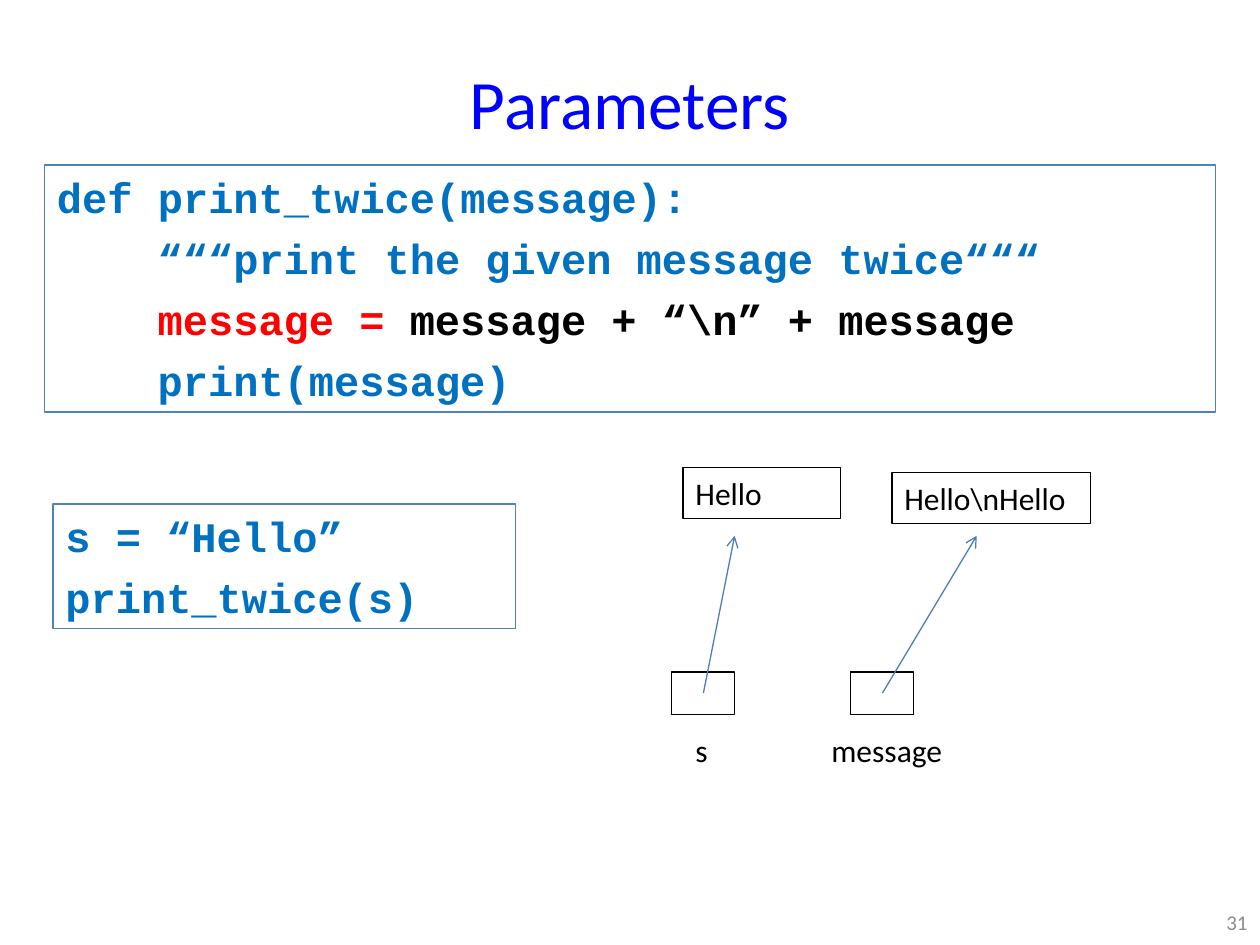
from dataclasses import dataclass

from lxml.etree import SubElement
from pptx import Presentation
from pptx.dml.color import RGBColor
from pptx.enum.shapes import MSO_CONNECTOR, MSO_SHAPE
from pptx.enum.text import MSO_ANCHOR, PP_ALIGN
from pptx.oxml.ns import qn
from pptx.util import Cm, Pt


@dataclass(frozen=True)
class Theme:
    title: str = "0000FF"
    code: str = "0070C0"
    changed: str = "FF0000"
    text: str = "000000"
    muted: str = "8C8C8C"
    frame: str = "4F81BD"
    arrow: str = "4B7EBC"
    body_font: str = "Calibri"
    code_font: str = "Courier New"
    title_size: float = 39.6
    code_size: float = 24
    label_size: float = 18
    number_size: float = 12
    line_width: float = 0.75


THEME = Theme()
CODE_INDENT = Cm(2.03)  # four characters of code


def write(s, lines, *, size, color=THEME.text, font=THEME.body_font, bold=False,
          align=PP_ALIGN.LEFT, anchor=MSO_ANCHOR.TOP, before=0):
    """Fill a shape; each line is (indent level, [(text, color or None), ...])."""
    tf = s.text_frame
    tf.word_wrap = True
    tf.vertical_anchor = anchor
    for i, (level, runs) in enumerate(lines):
        p = tf.paragraphs[0] if i == 0 else tf.add_paragraph()
        p.alignment = align
        p.space_before = Pt(before)
        if level:
            p._p.get_or_add_pPr().set("marL", str(level * CODE_INDENT))
        for text, run_color in runs:
            r = p.add_run()
            r.text = text
            r.font.name = font
            r.font.size = Pt(size)
            r.font.bold = bold
            r.font.color.rgb = RGBColor.from_string(run_color or color)


def add_label(slide, text, x, y, w, h, **fmt):
    s = slide.shapes.add_textbox(Cm(x), Cm(y), Cm(w), Cm(h))
    write(s, [(0, [(text, None)])], **fmt)


def add_box(slide, x, y, w, h, line=THEME.text):
    s = slide.shapes.add_shape(MSO_SHAPE.RECTANGLE, Cm(x), Cm(y), Cm(w), Cm(h))
    s.shadow.inherit = False
    s.fill.background()
    s.line.color.rgb = RGBColor.from_string(line)
    s.line.width = Pt(THEME.line_width)
    return s


def add_code(slide, lines, x, y, w, h):
    s = add_box(slide, x, y, w, h, THEME.frame)
    write(s, lines, size=THEME.code_size, color=THEME.code,
          font=THEME.code_font, bold=True, before=6)


def add_value(slide, text, x, y, w):
    s = add_box(slide, x, y, w, 1.03)
    write(s, [(0, [(text, None)])], size=THEME.label_size, anchor=MSO_ANCHOR.MIDDLE)


def add_arrow(slide, x1, y1, x2, y2):
    s = slide.shapes.add_connector(MSO_CONNECTOR.STRAIGHT, Cm(x1), Cm(y1), Cm(x2), Cm(y2))
    s.line.color.rgb = RGBColor.from_string(THEME.arrow)
    s.line.width = Pt(THEME.line_width)
    SubElement(s.line._get_or_add_ln(), qn("a:tailEnd"), type="arrow")
    SubElement(s._element.spPr, qn("a:effectLst"))


def add_variable(slide, name, x, name_x, name_w, target_x):
    """Draw a named memory cell with an arrow up to its value."""
    add_box(slide, x, 13.55, 1.27, 0.85)
    add_label(slide, name, name_x, 14.61, name_w, 1.03, size=THEME.label_size)
    add_arrow(slide, x + 0.64, 13.97, target_x, 10.8)


def main():
    prs = Presentation()
    prs.slide_width, prs.slide_height = Cm(25.4), Cm(19.05)
    slide = prs.slides.add_slide(prs.slide_layouts[6])

    add_label(slide, "Parameters", 0.9, 1.17, 23.6, 1.75, size=THEME.title_size,
              color=THEME.title, align=PP_ALIGN.CENTER, anchor=MSO_ANCHOR.MIDDLE)
    add_label(slide, "31", 24.3, 18.14, 1.1, 0.91, size=THEME.number_size,
              color=THEME.muted, align=PP_ALIGN.RIGHT, anchor=MSO_ANCHOR.MIDDLE)

    add_code(slide, [
        (0, [("def print_twice(message):", None)]),
        (1, [("“““print the given message twice“““", None)]),
        (1, [("message =", THEME.changed), (" message + “\\n” + message", THEME.text)]),
        (1, [("print(message)", None)]),
    ], 0.9, 3.33, 23.6, 4.98)
    add_code(slide, [
        (0, [("s = “Hello”", None)]),
        (0, [("print_twice(s)", None)]),
    ], 1.07, 10.16, 9.32, 2.51)

    add_value(slide, "Hello", 13.77, 9.42, 3.18)
    add_value(slide, "Hello\\nHello", 17.98, 9.53, 4.01)
    add_variable(slide, "s", 13.54, 13.77, 1.27, 14.81)
    add_variable(slide, "message", 17.15, 16.51, 2.97, 19.69)

    prs.save("out.pptx")


if __name__ == "__main__":
    main()
